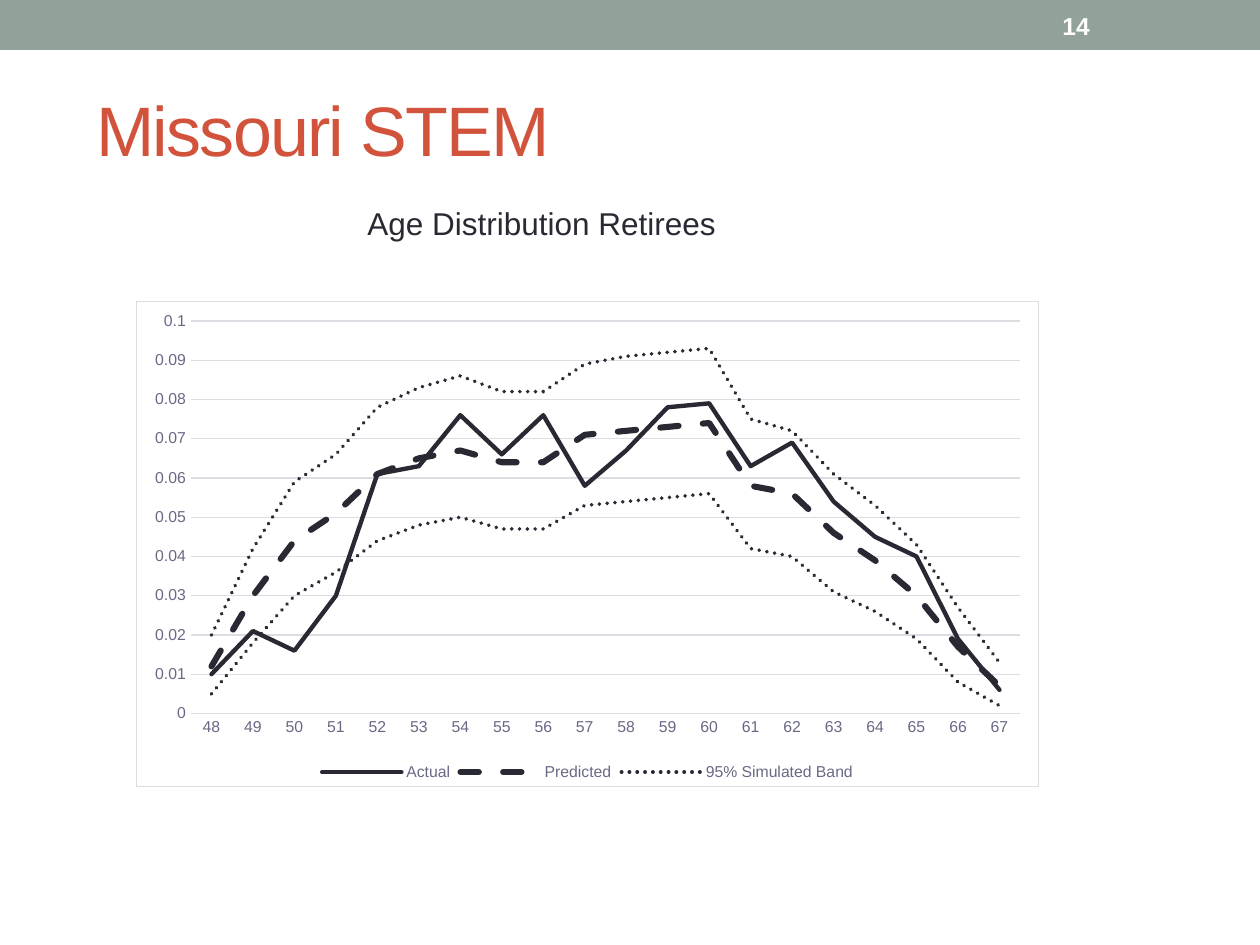
from lxml.etree import SubElement, fromstring
from pptx import Presentation
from pptx.chart.data import CategoryChartData
from pptx.dml.color import RGBColor
from pptx.enum.chart import XL_CHART_TYPE, XL_LEGEND_POSITION, XL_TICK_MARK
from pptx.enum.dml import MSO_LINE
from pptx.enum.shapes import MSO_SHAPE
from pptx.enum.text import MSO_ANCHOR
from pptx.oxml.ns import nsdecls, qn
from pptx.util import Emu, Pt

COLORS = {"bar": "93A299", "title": "D2533C", "ink": "292934",
          "label": "696986", "grid": "DCDCE3", "white": "FFFFFF"}
FONT = "Arial"
AGES = range(48, 68)
ACTUAL = [0.01, 0.021, 0.016, 0.03, 0.061, 0.063, 0.076, 0.066, 0.076, 0.058,
          0.067, 0.078, 0.079, 0.063, 0.069, 0.054, 0.045, 0.04, 0.019, 0.006]
PREDICTED = [0.012, 0.03, 0.044, 0.051, 0.061, 0.065, 0.067, 0.064, 0.064, 0.071,
             0.072, 0.073, 0.074, 0.058, 0.056, 0.046, 0.039, 0.03, 0.017, 0.007]
LOWER = [0.005, 0.018, 0.03, 0.036, 0.044, 0.048, 0.05, 0.047, 0.047, 0.053,
         0.054, 0.055, 0.056, 0.042, 0.04, 0.031, 0.026, 0.019, 0.008, 0.002]
UPPER = [0.02, 0.042, 0.059, 0.066, 0.078, 0.083, 0.086, 0.082, 0.082, 0.089,
         0.091, 0.092, 0.093, 0.075, 0.072, 0.061, 0.053, 0.043, 0.027, 0.013]
SERIES = [("Actual", ACTUAL, 2.5, MSO_LINE.SOLID),
          ("Predicted", PREDICTED, 3.5, MSO_LINE.DASH),
          ("95% Simulated Band", LOWER, 2.25, MSO_LINE.ROUND_DOT),
          ("Series 4", UPPER, 2.25, MSO_LINE.ROUND_DOT)]


def px(n):
    return Emu(round(n * 914400 / 126))


def rgb(name):
    return RGBColor.from_string(COLORS[name])


def style_font(font, size, color):
    font.name, font.size = FONT, Pt(size)
    font.color.rgb = rgb(color)


def style_line(line, color, width):
    line.color.rgb = rgb(color)
    line.width = Pt(width)


def add_text(s, box, text, size, color, bold=False, wrap=True,
             anchor=MSO_ANCHOR.TOP, top=6, spacing=0):
    tf = s.shapes.add_textbox(*map(px, box)).text_frame
    tf.word_wrap, tf.vertical_anchor, tf.margin_top = wrap, anchor, px(top)
    r = tf.paragraphs[0].add_run()
    r.text = text
    style_font(r.font, size, color)
    r.font.bold = bold
    if spacing:
        r.font._element.set("spc", str(spacing * 100))


def add_header(s, box):
    x, y, w, h = box
    bar = s.shapes.add_shape(MSO_SHAPE.RECTANGLE, *map(px, box))
    bar.shadow.inherit = False
    bar.fill.solid()
    bar.fill.fore_color.rgb = rgb("bar")
    bar.line.fill.background()
    add_text(s, (x + 1050, y + 3, 147, h - 5), "14", 14, "white", bold=True,
             anchor=MSO_ANCHOR.MIDDLE)


def add_titles(s, box):
    x, y, w, h = box
    add_text(s, (x, y, w, 136), "Missouri STEM", 40, "title", top=14, spacing=-1)
    add_text(s, (x + 271, y + 125, 377, 50), "Age Distribution Retirees", 18, "ink",
             wrap=False)


def set_plot_layout(chart, x, y, w, h):
    plot_area = chart._chartSpace.chart.plotArea
    for old in plot_area.findall(qn("c:layout")):
        plot_area.remove(old)
    layout = fromstring(f"<c:layout {nsdecls('c')}/>")
    manual = SubElement(layout, qn("c:manualLayout"))
    values = {"layoutTarget": "inner", "xMode": "edge", "yMode": "edge",
              "x": x, "y": y, "w": w, "h": h}
    for tag, val in values.items():
        SubElement(manual, qn(f"c:{tag}")).set("val", str(val))
    plot_area.insert(0, layout)


def set_chart_frame(chart):
    chart._chartSpace.chart.addnext(fromstring(
        f'<c:spPr {nsdecls("c", "a")}>'
        f'<a:solidFill><a:srgbClr val="{COLORS["white"]}"/></a:solidFill>'
        f'<a:ln w="9525"><a:solidFill><a:srgbClr val="{COLORS["grid"]}"/></a:solidFill></a:ln>'
        '</c:spPr>'))


def style_axes(chart):
    cat, val = chart.category_axis, chart.value_axis
    for axis in (cat, val):
        axis.major_tick_mark = axis.minor_tick_mark = XL_TICK_MARK.NONE
        style_font(axis.tick_labels.font, 9, "label")
    style_line(cat.format.line, "grid", 0.75)
    val.format.line.fill.background()
    val.minimum_scale, val.maximum_scale, val.major_unit = 0, 0.1, 0.01
    val.has_major_gridlines = True
    style_line(val.major_gridlines.format.line, "grid", 0.75)


def add_legend(chart, hidden):
    chart.has_legend = True
    legend = chart.legend
    legend.position = XL_LEGEND_POSITION.BOTTOM
    legend.include_in_layout = False
    style_font(legend.font, 9, "label")
    entry = fromstring(f"<c:legendEntry {nsdecls('c')}/>")
    SubElement(entry, qn("c:idx")).set("val", str(hidden))
    SubElement(entry, qn("c:delete")).set("val", "1")
    legend._element.find(qn("c:legendPos")).addnext(entry)


def add_age_chart(s, box):
    data = CategoryChartData(number_format="General")
    data.categories = [str(age) for age in AGES]
    for name, values, _, _ in SERIES:
        data.add_series(name, values)
    chart = s.shapes.add_chart(XL_CHART_TYPE.LINE, *map(px, box), data).chart
    chart.has_title = False
    style_font(chart.font, 10, "ink")
    chart.plots[0].vary_by_categories = False
    for series, (_, _, width, dash) in zip(chart.plots[0].series, SERIES):
        series.smooth = False
        line = series.format.line
        style_line(line, "ink", width)
        line.dash_style = dash
        series._element.find(".//" + qn("a:ln")).set("cap", "rnd")
    style_axes(chart)
    add_legend(chart, hidden=3)
    set_plot_layout(chart, 0.06, 0.04, 0.92, 0.81)
    set_chart_frame(chart)


def main():
    prs = Presentation()
    prs.slide_width, prs.slide_height = px(1260), px(945)
    s = prs.slides.add_slide(prs.slide_layouts[6])
    add_header(s, (0, 0, 1260, 50))
    add_titles(s, (84, 73, 1134, 175))
    add_age_chart(s, (136, 301, 903, 486))
    prs.save("out.pptx")


if __name__ == "__main__":
    main()
